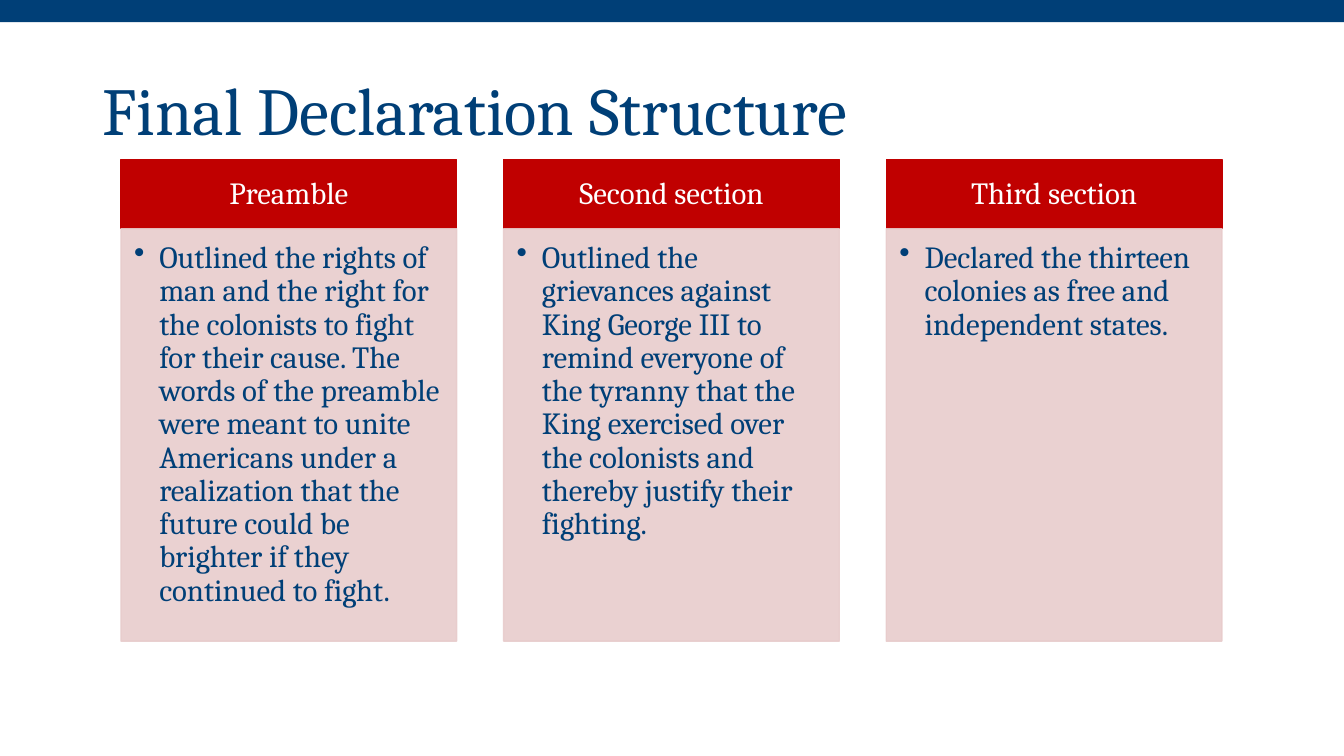
from lxml.etree import SubElement
from pptx import Presentation
from pptx.dml.color import RGBColor
from pptx.enum.shapes import MSO_SHAPE
from pptx.enum.text import MSO_ANCHOR, PP_ALIGN
from pptx.oxml.ns import qn
from pptx.util import Inches, Pt

HUES = {"navy": "003F77", "red": "C00000", "pink": "E8CCCC", "white": "FFFFFF"}
FONT = "Cambria"

# Column grid, in inches
LEFT, WIDE, STEP = 1.2, 3.33, 3.795
TOP, HEAD, BODY = 1.58, 0.69, 4.09

PARTS = [
    ("Preamble",
     "Outlined the rights of man and the right for the colonists to fight for "
     "their cause. The words of the preamble were meant to unite Americans "
     "under a realization that the future could be brighter if they "
     "continued to fight."),
    ("Second section",
     "Outlined the grievances against King George III to remind everyone of "
     "the tyranny that the King exercised over the colonists and thereby "
     "justify their fighting."),
    ("Third section",
     "Declared the thirteen colonies as free and independent states."),
]


def tint(name):
    return RGBColor.from_string(HUES[name])


def add_block(slide, area, hue, alpha=None):
    block = slide.shapes.add_shape(MSO_SHAPE.RECTANGLE, *map(Inches, area))
    block.shadow.inherit = False
    block.fill.solid()
    block.fill.fore_color.rgb = tint(hue)
    block.line.color.rgb = tint(hue)
    block.line.width = Pt(1)
    if alpha:
        for node in block._element.spPr.iter(qn("a:srgbClr")):
            SubElement(node, qn("a:alpha"), val=str(alpha * 1000))
    return block


def add_bullet(para):
    props = para._p.get_or_add_pPr()
    props.set("marL", str(Inches(0.25)))
    props.set("indent", str(-Inches(0.25)))
    SubElement(props, qn("a:buChar"), char="•")


def set_text(shape, text, size, hue, insets, anchor,
             align=PP_ALIGN.LEFT, bullet=False):
    frame = shape.text_frame
    frame.word_wrap = True
    frame.vertical_anchor = anchor
    (frame.margin_left, frame.margin_top,
     frame.margin_right, frame.margin_bottom) = map(Inches, insets)
    frame.text = text
    para = frame.paragraphs[0]
    para.alignment = align
    para.line_spacing = 0.9
    if bullet:
        add_bullet(para)
    font = para.runs[0].font
    font.name, font.size = FONT, Pt(size)
    font.color.rgb = tint(hue)


def add_part(slide, col, head, body):
    left = LEFT + col * STEP
    # Heading
    block = add_block(slide, (left, TOP, WIDE, HEAD), "red")
    set_text(block, head, 22, "white", (0.17, 0.1, 0.17, 0.1),
             MSO_ANCHOR.MIDDLE, PP_ALIGN.CENTER)
    # Description
    block = add_block(slide, (left, TOP + HEAD, WIDE, BODY), "pink", 90)
    set_text(block, body, 22, "navy", (0.13, 0.13, 0.17, 0.19),
             MSO_ANCHOR.TOP, bullet=True)


def main():
    deck = Presentation()
    deck.slide_width, deck.slide_height = Inches(13.33), Inches(7.5)
    slide = deck.slides.add_slide(deck.slide_layouts[6])

    # Top band
    band = add_block(slide, (0, 0, 13.33, 0.22), "navy")
    band.line.fill.background()

    # Title
    title = slide.shapes.add_textbox(*map(Inches, (0.92, 0.4, 11.5, 1.45)))
    set_text(title, "Final Declaration Structure", 48, "navy",
             (0.1, 0.05, 0.1, 0.05), MSO_ANCHOR.MIDDLE)

    # Three columns
    for col, (head, body) in enumerate(PARTS):
        add_part(slide, col, head, body)

    deck.save("out.pptx")


if __name__ == "__main__":
    main()
